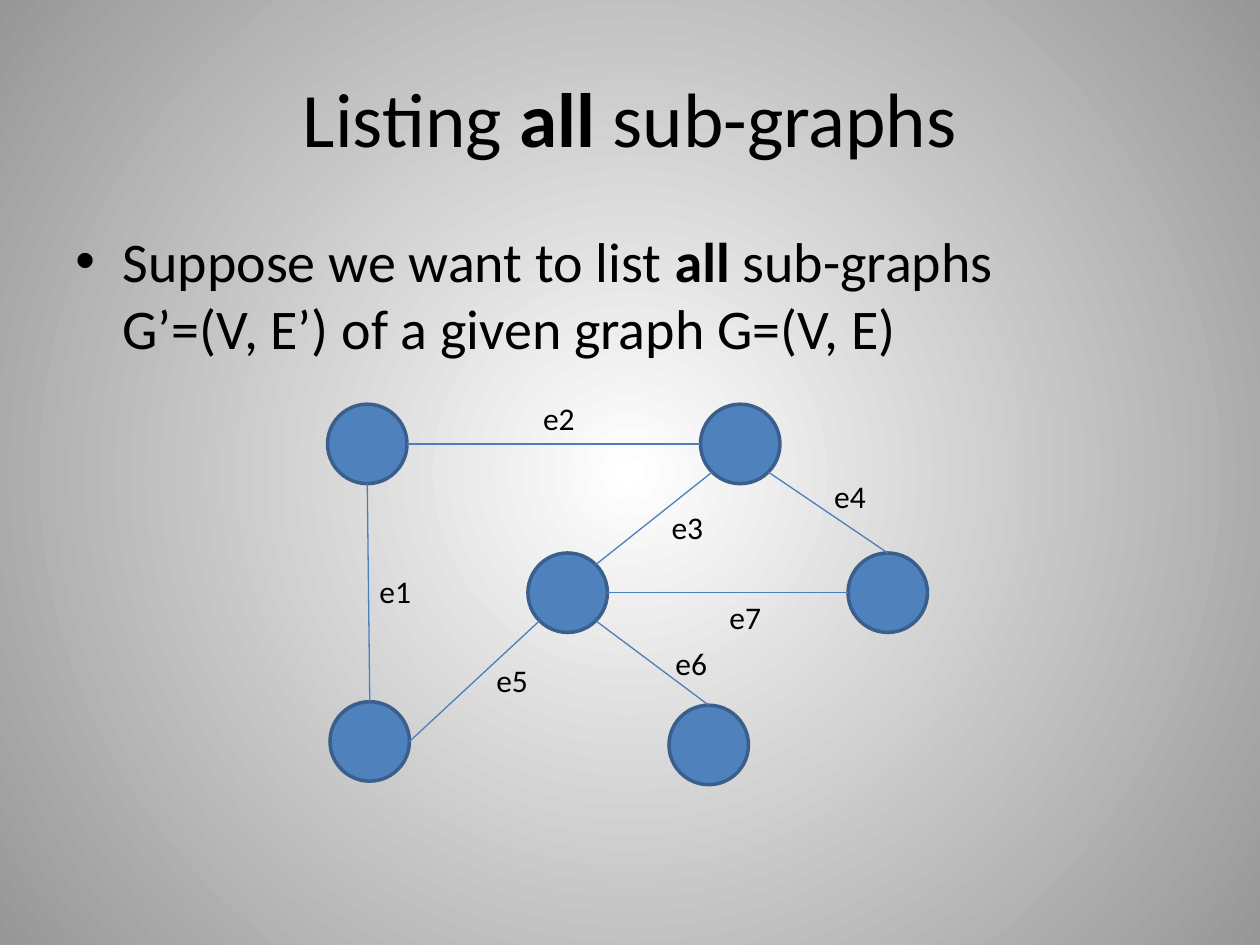
from math import cos, radians, sin

from lxml import etree
from pptx import Presentation
from pptx.dml.color import RGBColor
from pptx.enum.shapes import MSO_CONNECTOR, MSO_SHAPE
from pptx.enum.text import MSO_ANCHOR as Anchor, PP_ALIGN as Align
from pptx.oxml import parse_xml
from pptx.oxml.ns import qn
from pptx.util import Pt

FONT = "Calibri"
BLACK, NODE_FILL, NODE_LINE, EDGE_LINE = "000000", "4F81BD", "3A5F8C", "4B7EBC"
CENTRE_COLOR, RIM_COLOR = "FFFFFF", "979797"
DIAMETER = 45.4
LABEL_SIZE = (37.4, 29)
LINE_BREAK = "\v"

# Top left corner of each node, from the corner of the graph
NODES = {
    "top left": (0.2, 0),
    "middle": (114.7, 85),
    "bottom left": (1.6, 170),
    "bottom right": (195.3, 172),
    "top right": (213.3, 0),
    "right": (297.6, 85),
}

# Angles on a node's rim, clockwise from the right
RIGHT, LOWER_RIGHT, BOTTOM, LOWER_LEFT = 0, 45, 90, 135
LEFT, TOP, UPPER_RIGHT = 180, 270, 315

# Name, start node and angle, end node and angle, label corner
EDGES = [
    ("e1", "top left", BOTTOM, "bottom left", TOP, (17.6, 92.3)),
    ("e2", "top left", RIGHT, "top right", LEFT, (111.1, -6.4)),
    ("e3", "top right", LOWER_LEFT, "middle", UPPER_RIGHT, (184.5, 55.6)),
    ("e4", "top right", LOWER_RIGHT, "right", TOP, (277.4, 38.3)),
    ("e5", "bottom left", RIGHT, "middle", LOWER_LEFT, (84.4, 143.4)),
    ("e6", "bottom right", TOP, "middle", LOWER_RIGHT, (186.7, 133.3)),
    ("e7", "middle", RIGHT, "right", LEFT, (217.6, 107.4)),
]


def color(value):
    return RGBColor.from_string(value)


def add_text(slide, box, parts, size, align, anchor=Anchor.TOP):
    """Add a one-paragraph text box; parts are (text, bold) pairs."""
    shape = slide.shapes.add_textbox(*map(Pt, box))
    frame = shape.text_frame
    frame.word_wrap = True
    frame.vertical_anchor = anchor
    paragraph = frame.paragraphs[0]
    paragraph.alignment = align
    for text, bold in parts:
        if text == LINE_BREAK:
            paragraph.add_line_break()
            continue
        run = paragraph.add_run()
        run.text = text
        run.font.name = FONT
        run.font.size = Pt(size)
        run.font.bold = bold
        run.font.color.rgb = color(BLACK)
    return paragraph


def set_background(slide):
    """Fill the background with a circular gradient."""
    fill = slide.background.fill
    fill.solid()
    fill.fore_color.rgb = color(CENTRE_COLOR)
    solid = next(slide.element.iter(qn("a:solidFill")))
    gradient = parse_xml(
        '<a:gradFill xmlns:a="http://schemas.openxmlformats.org/drawingml/2006/main"'
        ' rotWithShape="1"><a:gsLst>'
        f'<a:gs pos="0"><a:srgbClr val="{CENTRE_COLOR}"/></a:gs>'
        f'<a:gs pos="100000"><a:srgbClr val="{RIM_COLOR}"/></a:gs></a:gsLst>'
        '<a:path path="circle"><a:fillToRect l="50000" t="50000" r="50000" b="50000"/>'
        "</a:path></a:gradFill>"
    )
    solid.getparent().replace(solid, gradient)


def add_title(slide, box):
    parts = [("Listing ", False), ("all ", True), ("sub-graphs", False)]
    add_text(slide, box, parts, 44, Align.CENTER, Anchor.MIDDLE)


def add_body(slide, box):
    parts = [
        ("Suppose we want to list ", False),
        ("all", True),
        (" sub-graphs", False),
        (LINE_BREAK, False),
        ("G’=(V, E’) of a given graph G=(V, E)", False),
    ]
    paragraph = add_text(slide, box, parts, 32, Align.LEFT)
    paragraph.space_before = Pt(6.4)
    properties = paragraph._p.get_or_add_pPr()
    properties.set("marL", str(Pt(27)))
    properties.set("indent", str(-Pt(27)))
    etree.SubElement(properties, qn("a:buFont")).set("typeface", "Arial")
    etree.SubElement(properties, qn("a:buChar")).set("char", "•")


def add_node(slide, left, top):
    shape = slide.shapes.add_shape(
        MSO_SHAPE.OVAL, Pt(left), Pt(top), Pt(DIAMETER), Pt(DIAMETER)
    )
    shape.shadow.inherit = False
    shape.fill.solid()
    shape.fill.fore_color.rgb = color(NODE_FILL)
    shape.line.color.rgb = color(NODE_LINE)
    shape.line.width = Pt(2)


def add_edge(slide, start, end):
    connector = slide.shapes.add_connector(
        MSO_CONNECTOR.STRAIGHT, *map(Pt, start + end)
    )
    connector.line.color.rgb = color(EDGE_LINE)
    connector.line.width = Pt(0.75)
    etree.SubElement(connector._element.spPr, qn("a:effectLst"))


def add_graph(slide, left, top):
    def rim_point(node, angle):
        x, y = NODES[node]
        radius = DIAMETER / 2
        return (
            left + x + radius * (1 + cos(radians(angle))),
            top + y + radius * (1 + sin(radians(angle))),
        )

    for x, y in NODES.values():
        add_node(slide, left + x, top + y)
    for _, start, start_angle, end, end_angle, _ in EDGES:
        add_edge(slide, rim_point(start, start_angle), rim_point(end, end_angle))
    for name, *_, (x, y) in EDGES:
        box = (left + x, top + y, *LABEL_SIZE)
        add_text(slide, box, [(name, False)], 18, Align.RIGHT)


def main():
    presentation = Presentation()
    presentation.slide_width, presentation.slide_height = Pt(720), Pt(540)
    slide = presentation.slides.add_slide(presentation.slide_layouts[6])
    set_background(slide)
    add_title(slide, (36, 21.6, 648, 90))
    add_body(slide, (36, 126, 648, 356.4))
    add_graph(slide, 187, 231)
    presentation.save("out.pptx")


if __name__ == "__main__":
    main()
